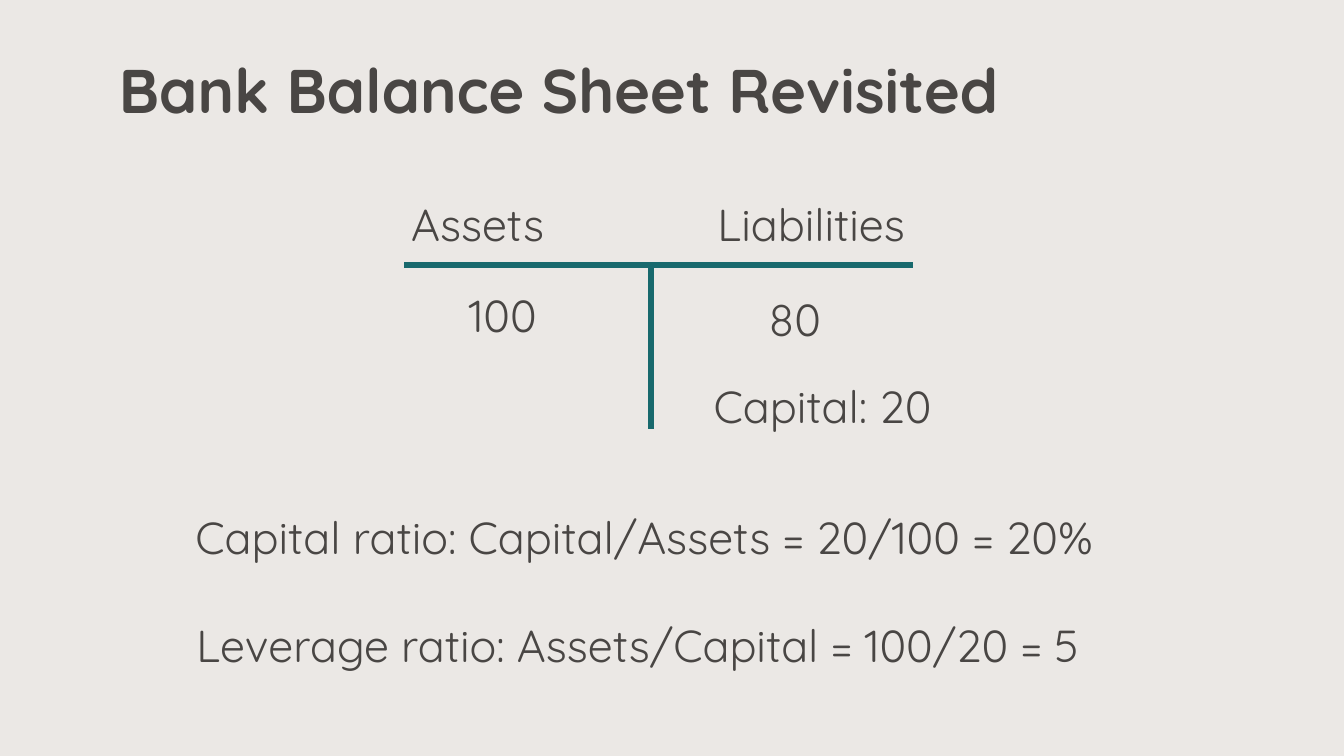
from lxml import etree
from pptx import Presentation
from pptx.dml.color import RGBColor
from pptx.enum.shapes import MSO_CONNECTOR
from pptx.enum.text import MSO_ANCHOR
from pptx.oxml.ns import qn
from pptx.util import Pt

STRAIGHT = MSO_CONNECTOR.STRAIGHT
TOP, MIDDLE = MSO_ANCHOR.TOP, MSO_ANCHOR.MIDDLE

FONT = "Quicksand"
SAND = RGBColor(0xEB, 0xE8, 0xE5)
CHARCOAL = RGBColor(0x49, 0x46, 0x44)
TEAL = RGBColor(0x18, 0x69, 0x6D)

# Content: text, left, top, width (points)
TITLE = "Bank Balance Sheet Revisited"
ACCOUNT_ENTRIES = [
    ("Assets", 286.5, 136.8, 123),
    ("100", 327.6, 201.6, 77),
    ("Liabilities", 505.4, 136.8, 160),
    ("80", 542.2, 204.5, 77),
    ("Capital: 20", 502.6, 267.1, 187),
]
RATIOS = [
    ("Capital ratio: Capital/Assets = 20/100 = 20%", 132.5, 360.7, 718.6),
    ("Leverage ratio: Assets/Capital = 100/20 = 5", 133.2, 437.8, 718.6),
]
ENTRY_HEIGHT = 46

# T-account geometry (points)
BAR_LEFT, BAR_RIGHT, BAR_Y = 288.7, 652.3, 189.4
STEM_X, STEM_BOTTOM = 465.1, 306.7


def add_text(slide, text, left, top, width, height=ENTRY_HEIGHT,
             size=32, bold=False, anchor=TOP, line_spacing=1.0):
    frame = slide.shapes.add_textbox(
        Pt(left), Pt(top), Pt(width), Pt(height)).text_frame
    frame.word_wrap = True
    frame.vertical_anchor = anchor
    paragraph = frame.paragraphs[0]
    paragraph.line_spacing = line_spacing
    run = paragraph.add_run()
    run.text = text
    run.font.name = FONT
    run.font.size = Pt(size)
    run.font.bold = bold
    run.font.color.rgb = CHARCOAL


def add_rule(slide, x1, y1, x2, y2):
    rule = slide.shapes.add_connector(STRAIGHT, Pt(x1), Pt(y1), Pt(x2), Pt(y2))
    rule.line.color.rgb = TEAL
    rule.line.width = Pt(4)
    etree.SubElement(rule._element.spPr, qn("a:effectLst"))


def main():
    deck = Presentation()
    deck.slide_width, deck.slide_height = Pt(960), Pt(540)
    slide = deck.slides.add_slide(deck.slide_layouts[6])
    slide.background.fill.solid()
    slide.background.fill.fore_color.rgb = SAND

    # Title
    add_text(slide, TITLE, 77.8, 14.4, 828, 104.4, size=44, bold=True,
             anchor=MIDDLE, line_spacing=0.9)

    # T-account
    add_rule(slide, BAR_LEFT, BAR_Y, BAR_RIGHT, BAR_Y)
    add_rule(slide, STEM_X, BAR_Y, STEM_X, STEM_BOTTOM)

    # Account entries and ratios
    for entry in ACCOUNT_ENTRIES + RATIOS:
        add_text(slide, *entry)

    deck.save("out.pptx")


if __name__ == "__main__":
    main()
